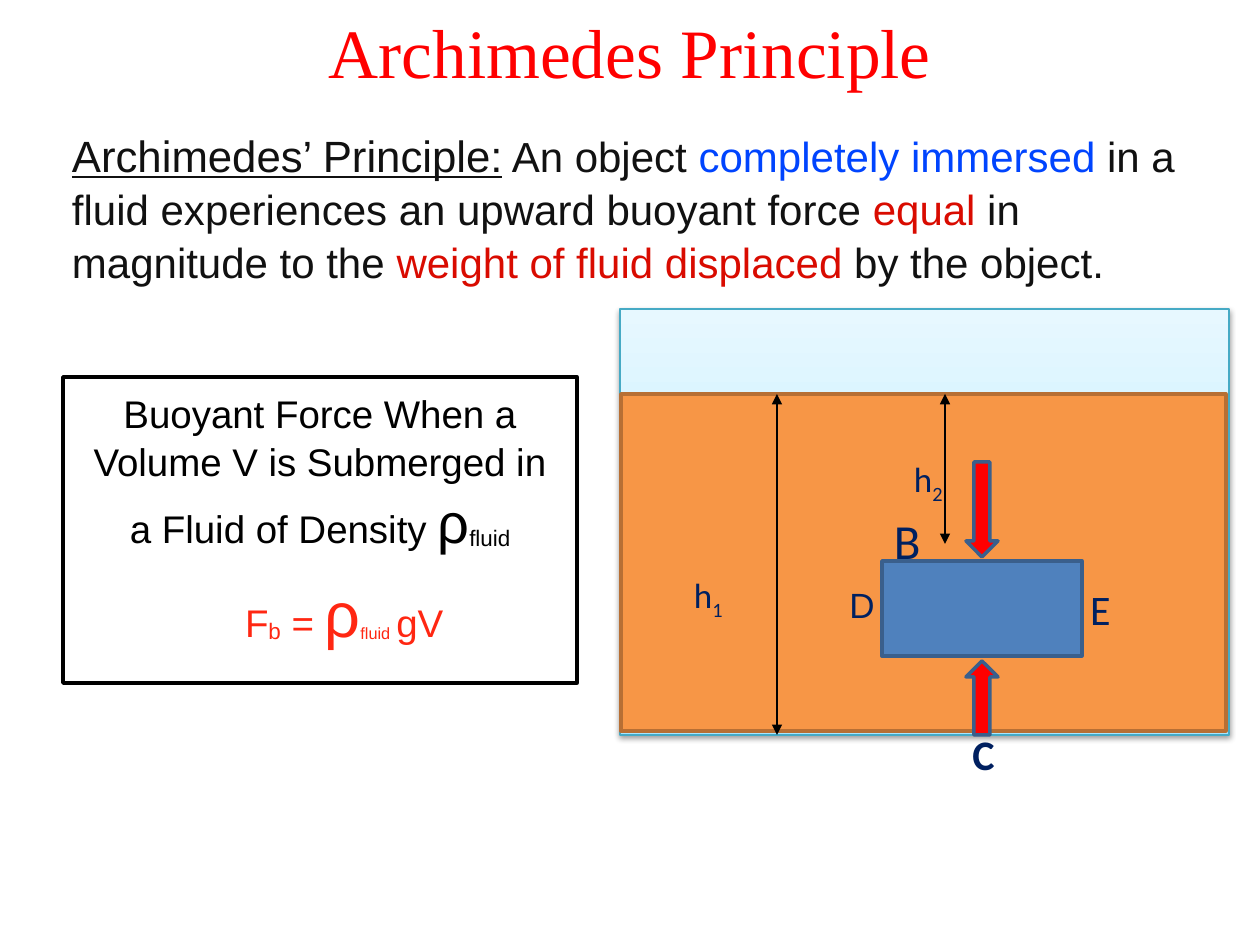
from dataclasses import dataclass
from typing import Optional
import copy

import lxml.etree
import pptx
import pptx.dml.color
import pptx.enum.shapes
import pptx.enum.text
import pptx.oxml
import pptx.oxml.ns
import pptx.util

EMU_PER_PX = 914400 / 126
SHAPE = pptx.enum.shapes.MSO_SHAPE
ALIGN = pptx.enum.text.PP_ALIGN
ANCHOR = pptx.enum.text.MSO_ANCHOR
NAVY, RED, BLACK = "002060", "FF0000", "000000"
STEEL = "3A5F8C"
BODY, ACCENT = "111111", "D90B00"


@dataclass
class Box:
    left: int
    top: int
    width: int
    height: int


@dataclass
class Run:
    text: str
    size: Optional[int] = None
    color: Optional[str] = None
    underline: Optional[bool] = None
    baseline: int = 0


@dataclass
class Style:
    size: float
    color: str
    font: str = "Arial"
    align: ALIGN = ALIGN.RIGHT
    bold: bool = False
    line_spacing: Optional[float] = None


@dataclass
class Block:
    box: Box
    kind: SHAPE
    fill: Optional[str]
    line: str
    line_width: float = 2


@dataclass
class Label:
    box: Box
    runs: list[Run]
    style: Style


def px(length: float) -> pptx.util.Emu:
    return pptx.util.Emu(round(length * EMU_PER_PX))


def rgb(value: str) -> pptx.dml.color.RGBColor:
    return pptx.dml.color.RGBColor.from_string(value)


def bounds(box: Box) -> list:
    return [px(length) for length in (box.left, box.top, box.width, box.height)]


def write(frame, runs: list[Run], style: Style) -> None:
    frame.word_wrap = True
    paragraph = frame.paragraphs[0]
    paragraph.alignment = style.align
    paragraph.line_spacing = style.line_spacing
    paragraph.font.name = style.font
    paragraph.font.size = pptx.util.Pt(style.size)
    paragraph.font.bold = style.bold
    paragraph.font.color.rgb = rgb(style.color)
    for item in runs:
        run = paragraph.add_run()
        run.text = item.text
        if item.size:
            run.font.size = pptx.util.Pt(item.size)
        if item.color:
            run.font.color.rgb = rgb(item.color)
        if item.underline:
            run.font.underline = True
        if item.baseline:
            run.font._element.set("baseline", str(item.baseline * 1000))


def add_text(slide, label: Label, insets: Optional[tuple] = None, anchor=ANCHOR.TOP) -> None:
    """Insets are the left and right margins; given, they also clear top and bottom."""
    frame = slide.shapes.add_textbox(*bounds(label.box)).text_frame
    frame.vertical_anchor = anchor
    if insets:
        frame.margin_left, frame.margin_right = map(px, insets)
        frame.margin_top = frame.margin_bottom = 0
    write(frame, label.runs, label.style)


def add_block(slide, block: Block):
    shape = slide.shapes.add_shape(block.kind, *bounds(block.box))
    shape.shadow.inherit = False
    if block.fill:
        shape.fill.solid()
        shape.fill.fore_color.rgb = rgb(block.fill)
    else:
        shape.fill.background()
    shape.line.color.rgb = rgb(block.line)
    shape.line.width = pptx.util.Pt(block.line_width)
    return shape


def add_tank(slide, block: Block) -> None:
    """Air above the fluid: a three-stop gradient rectangle with a soft shadow."""
    shape = add_block(slide, block)
    shape.fill.gradient()
    shape.fill.gradient_angle = 90
    stop_list = shape._element.spPr.find(".//" + pptx.oxml.ns.qn("a:gsLst"))
    stop_list.insert(1, copy.deepcopy(stop_list[0]))
    stops = [(0, "A7E6FF"), (0.35, "C1EDFF"), (1, "E7F8FF")]
    for stop, (position, color) in zip(shape.fill.gradient_stops, stops):
        stop.position = position
        stop.color.rgb = rgb(color)
    effects = shape._element.spPr.find(pptx.oxml.ns.qn("a:effectLst"))
    effects.append(pptx.oxml.parse_xml(
        f'<a:outerShdw {pptx.oxml.ns.nsdecls("a")} blurRad="40000" dist="20000" dir="5400000">'
        '<a:srgbClr val="000000"><a:alpha val="38000"/></a:srgbClr></a:outerShdw>'))


def add_depth_arrow(slide, x: int, top: int, bottom: int) -> None:
    connector = slide.shapes.add_connector(
        pptx.enum.shapes.MSO_CONNECTOR.STRAIGHT, px(x), px(top), px(x), px(bottom))
    connector.line.color.rgb = rgb(BLACK)
    connector.line.width = pptx.util.Pt(0.75)
    line = connector.line._get_or_add_ln()
    for end in ("a:headEnd", "a:tailEnd"):
        lxml.etree.SubElement(line, pptx.oxml.ns.qn(end), type="triangle")
    lxml.etree.SubElement(connector._element.spPr, pptx.oxml.ns.qn("a:effectLst"))


def add_title(slide) -> None:
    title = slide.shapes.title
    title.left, title.top, title.width, title.height = bounds(Box(63, 2, 1134, 98))
    title.text_frame.vertical_anchor = ANCHOR.MIDDLE
    write(title.text_frame, [Run("Archimedes Principle")],
          Style(39.6, RED, "Times New Roman", ALIGN.CENTER))


def add_diagram(slide) -> None:
    surface = 394
    add_tank(slide, Block(Box(620, 309, 609, 426), SHAPE.RECTANGLE, "E7F8FF", "46AAC5", 0.75))
    add_block(slide, Block(Box(621, surface, 605, 337), SHAPE.RECTANGLE, "F79646", "B76F34"))
    add_depth_arrow(slide, 945, surface, 544)
    add_depth_arrow(slide, 777, surface, 735)

    small, medium = Style(20, NAVY, "Calibri"), Style(24, NAVY, "Calibri")
    labels = [
        Label(Box(777, 577, 110, 63), [Run("D")], Style(20, NAVY)),
        Label(Box(1075, 577, 48, 63), [Run("E")], medium),
        Label(Box(944, 722, 63, 63), [Run("C")], Style(24, NAVY, "Calibri", bold=True)),
        Label(Box(897, 451, 58, 55), [Run("h"), Run("2", baseline=-25)], small),
        Label(Box(677, 567, 58, 55), [Run("h"), Run("1", baseline=-25)], small),
        Label(Box(880, 504, 53, 72), [Run("B")], Style(28, NAVY, "Calibri")),
    ]
    for block in (
        Block(Box(966, 462, 32, 95), SHAPE.DOWN_ARROW, RED, STEEL),
        Block(Box(966, 661, 32, 74), SHAPE.UP_ARROW, RED, STEEL),
    ):
        add_block(slide, block)
    for label in labels:
        add_text(slide, label)
    add_block(slide, Block(Box(882, 561, 200, 95), SHAPE.RECTANGLE, "4F81BD", STEEL))


def add_statements(slide) -> None:
    add_text(slide, Label(Box(64, 126, 1154, 156), [
        Run("Archimedes’ Principle:", 25, underline=True),
        Run(" An object "),
        Run("completely immersed", color="0044FE"),
        Run(" in a fluid experiences an upward buoyant force "),
        Run("equal", color=ACCENT),
        Run(" in magnitude to the "),
        Run("weight of fluid displaced", color=ACCENT),
        Run(" by the object."),
    ], Style(24, BODY, align=ALIGN.LEFT, line_spacing=1.05)), (8, 5))
    add_text(slide, Label(Box(72, 389, 496, 165), [
        Run("Buoyant Force When a Volume V is Submerged in a Fluid of Density "),
        Run("ρ", 32),
        Run("fluid", baseline=-6),
    ], Style(22, BLACK, align=ALIGN.CENTER, line_spacing=1.05)), (8, 8), ANCHOR.MIDDLE)
    add_text(slide, Label(Box(237, 572, 236, 77), [
        Run("F"),
        Run("b", baseline=-6),
        Run(" = "),
        Run("ρ", 36),
        Run("fluid", 16, baseline=-6),
        Run(" ", baseline=-6),
        Run("gV"),
    ], Style(22, "FF2712", align=ALIGN.LEFT, line_spacing=1.05)), (8, 8), ANCHOR.MIDDLE)
    add_block(slide, Block(Box(63, 377, 514, 306), SHAPE.RECTANGLE, None, BLACK))


def main() -> None:
    presentation = pptx.Presentation()
    presentation.slide_width, presentation.slide_height = px(1260), px(945)
    slide = presentation.slides.add_slide(presentation.slide_layouts[5])
    add_title(slide)
    add_diagram(slide)
    add_statements(slide)
    presentation.save("out.pptx")


if __name__ == "__main__":
    main()
